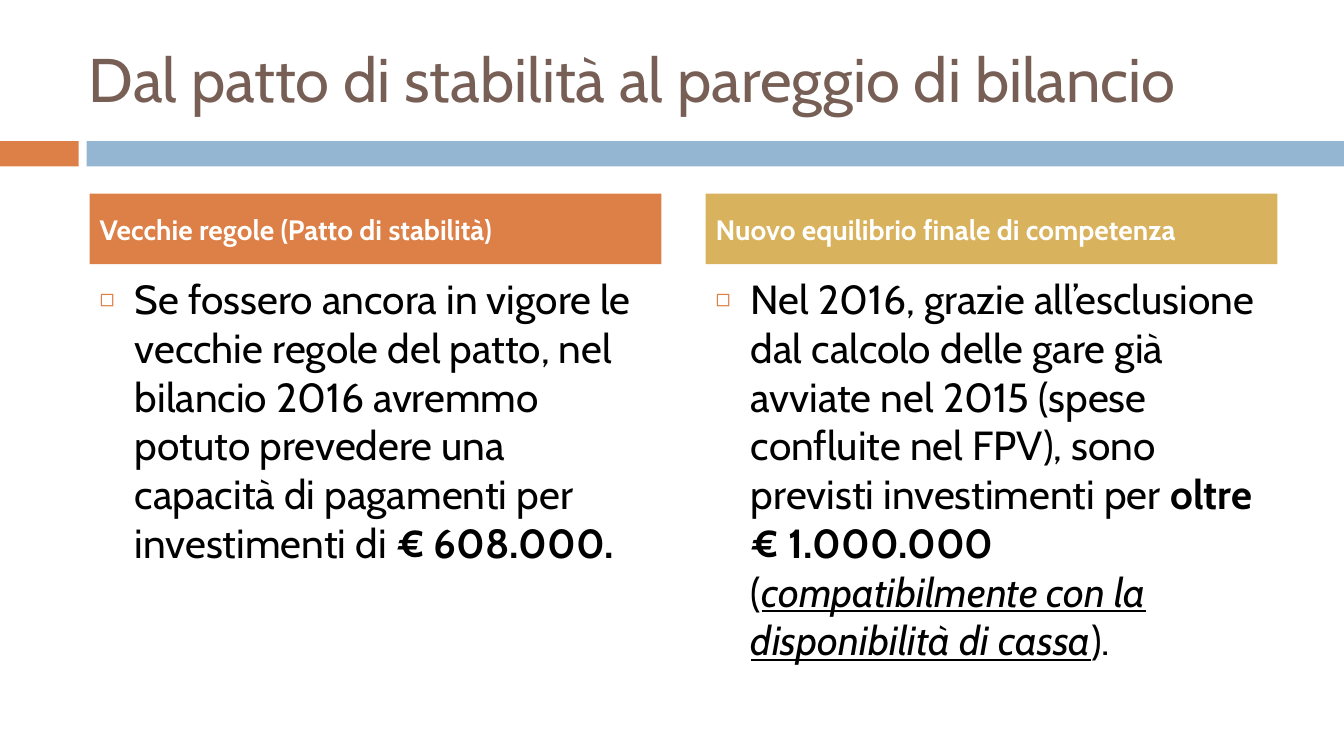
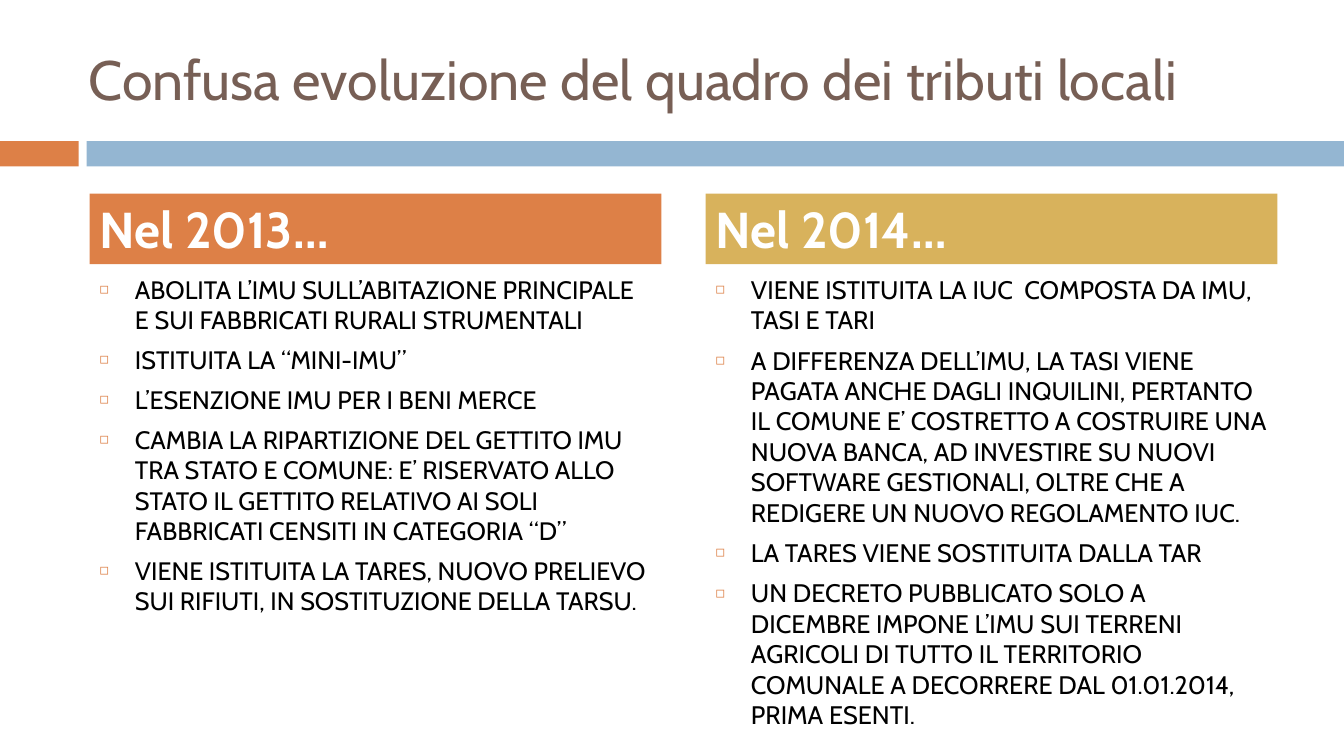
import pptx
import pptx.dml.color
import pptx.enum.shapes
import pptx.enum.text
import pptx.oxml
import pptx.oxml.ns
import pptx.util
from pptx.util import Inches

FONT = "Cabin"
ORANGE, BLUE, GOLD = "DD8047", "94B6D2", "D8B25C"
BROWN, BLACK, WHITE = "775F55", "000000", "FFFFFF"
COLUMN_LEFTS = (0.89, 7)
COLUMN_FILLS = (ORANGE, GOLD)
COLUMN_WIDTH = 5.67

SLIDES = [
    {
        "title": ("Dal patto di stabilità al pareggio di bilancio", 44),
        "header_size": 20,
        "columns": [
            ("Vecchie regole (Patto di stabilità)", 29, [[
                ("Se fossero ancora in vigore le vecchie regole del patto, nel bilancio 2016 "
                 "avremmo potuto prevedere una capacità di pagamenti per investimenti di ", ""),
                ("€ 608.000.", "b"),
            ]]),
            ("Nuovo equilibrio finale di competenza", 29, [[
                ("Nel 2016, grazie all’esclusione dal calcolo delle gare già avviate nel 2015 "
                 "(spese confluite nel FPV), sono previsti investimenti per ", ""),
                ("oltre € 1.000.000 ", "b"),
                ("(", ""),
                ("compatibilmente con la disponibilità di cassa", "iu"),
                (").", ""),
            ]]),
        ],
    },
    {
        "title": ("Confusa evoluzione del quadro dei tributi locali", 39.6),
        "header_size": 36,
        "columns": [
            ("Nel 2013…", 18, [
                [("ABOLITA L’IMU SULL’ABITAZIONE PRINCIPALE E SUI FABBRICATI RURALI "
                  "STRUMENTALI", "")],
                [("ISTITUITA LA “MINI-IMU”", "")],
                [("L’ESENZIONE IMU PER I BENI MERCE", "")],
                [("CAMBIA LA RIPARTIZIONE DEL GETTITO IMU TRA STATO E COMUNE: E’ RISERVATO "
                  "ALLO STATO IL GETTITO RELATIVO AI SOLI FABBRICATI CENSITI IN CATEGORIA "
                  "“D”", "")],
                [("VIENE ISTITUITA LA TARES, NUOVO PRELIEVO SUI RIFIUTI, IN SOSTITUZIONE "
                  "DELLA TARSU.", "")],
            ]),
            ("Nel 2014…", 18.1, [
                [("VIENE ISTITUITA LA IUC  COMPOSTA DA IMU, TASI E TARI", "")],
                [("A DIFFERENZA DELL’IMU, LA TASI VIENE PAGATA ANCHE DAGLI INQUILINI, "
                  "PERTANTO IL COMUNE E’ COSTRETTO A COSTRUIRE UNA NUOVA BANCA, AD INVESTIRE "
                  "SU NUOVI SOFTWARE GESTIONALI, OLTRE CHE A REDIGERE UN NUOVO REGOLAMENTO "
                  "IUC.", "")],
                [("LA TARES VIENE SOSTITUITA DALLA TAR", "")],
                [("UN DECRETO PUBBLICATO SOLO A DICEMBRE IMPONE L’IMU SUI TERRENI AGRICOLI "
                  "DI TUTTO IL TERRITORIO COMUNALE A DECORRERE DAL 01.01.2014, PRIMA "
                  "ESENTI.", "")],
            ]),
        ],
    },
]


def rgb(value):
    """Turn a hex string into a colour."""
    return pptx.dml.color.RGBColor.from_string(value)


def add_run(p, text, size, color, style=""):
    """Append a run; style holds any of b, i and u."""
    r = p.add_run()
    r.text = text
    r.font.name = FONT
    r.font.size = pptx.util.Pt(size)
    r.font.color.rgb = rgb(color)
    r.font.bold = "b" in style
    r.font.italic = "i" in style
    r.font.underline = "u" in style


def set_bullet(p):
    """Give a paragraph the hollow square bullet and hanging indent."""
    pPr = p._p.get_or_add_pPr()
    pPr.set("marL", str(Inches(0.35)))
    pPr.set("indent", str(-Inches(0.35)))
    ns = pptx.oxml.ns.nsdecls("a")
    for xml in (
        f'<a:buClr {ns}><a:srgbClr val="{ORANGE}"/></a:buClr>',
        f'<a:buSzPct {ns} val="60000"/>',
        f'<a:buFont {ns} typeface="{FONT}"/>',
        f'<a:buChar {ns} char="◻"/>',
    ):
        pPr.append(pptx.oxml.parse_xml(xml))


def set_title(slide, text, size):
    """Place and fill the title placeholder."""
    sp = slide.shapes.title
    sp.left, sp.top = Inches(0.78), Inches(0.3)
    sp.width, sp.height = Inches(11.89), Inches(0.95)
    tf = sp.text_frame
    tf.auto_size = pptx.enum.text.MSO_AUTO_SIZE.NONE
    tf.vertical_anchor = pptx.enum.text.MSO_ANCHOR.MIDDLE
    p = tf.paragraphs[0]
    p.alignment = pptx.enum.text.PP_ALIGN.LEFT
    add_run(p, text, size, BROWN)


def add_rect(slide, left, top, width, height, fill):
    """Add a flat filled rectangle."""
    sp = slide.shapes.add_shape(
        pptx.enum.shapes.MSO_SHAPE.RECTANGLE,
        Inches(left), Inches(top), Inches(width), Inches(height))
    sp.shadow.inherit = False
    sp.fill.solid()
    sp.fill.fore_color.rgb = rgb(fill)
    sp.line.fill.background()
    return sp


def add_bands(slide):
    """Draw the two-colour band under the title."""
    add_rect(slide, 0, 1.4, 0.78, 0.25, ORANGE)
    add_rect(slide, 0.86, 1.4, 12.47, 0.25, BLUE)


def add_header(slide, left, text, size, fill):
    """Add the coloured heading of a column."""
    tf = add_rect(slide, left, 1.92, COLUMN_WIDTH, 0.7, fill).text_frame
    tf.word_wrap = True
    tf.vertical_anchor = pptx.enum.text.MSO_ANCHOR.MIDDLE
    p = tf.paragraphs[0]
    p.alignment = pptx.enum.text.PP_ALIGN.LEFT
    add_run(p, text, size, WHITE, "b")


def add_bullets(slide, left, paragraphs, size):
    """Add the bulleted text of a column."""
    sp = slide.shapes.add_textbox(
        Inches(left), Inches(2.67), Inches(COLUMN_WIDTH), Inches(4.5))
    tf = sp.text_frame
    tf.word_wrap = True
    for i, runs in enumerate(paragraphs):
        p = tf.add_paragraph() if i else tf.paragraphs[0]
        p.space_before = pptx.util.Pt(7)
        set_bullet(p)
        for text, style in runs:
            add_run(p, text, size, BLACK, style)


def add_comparison(prs, content):
    """Add a slide that compares two columns."""
    slide = prs.slides.add_slide(prs.slide_layouts[5])
    add_bands(slide)
    set_title(slide, *content["title"])
    for left, fill, column in zip(COLUMN_LEFTS, COLUMN_FILLS, content["columns"]):
        header, size, paragraphs = column
        add_header(slide, left, header, content["header_size"], fill)
        add_bullets(slide, left, paragraphs, size)


def main():
    """Build and save the presentation."""
    prs = pptx.Presentation()
    prs.slide_width, prs.slide_height = Inches(13.33), Inches(7.5)
    for content in SLIDES:
        add_comparison(prs, content)
    prs.save("out.pptx")


if __name__ == "__main__":
    main()
